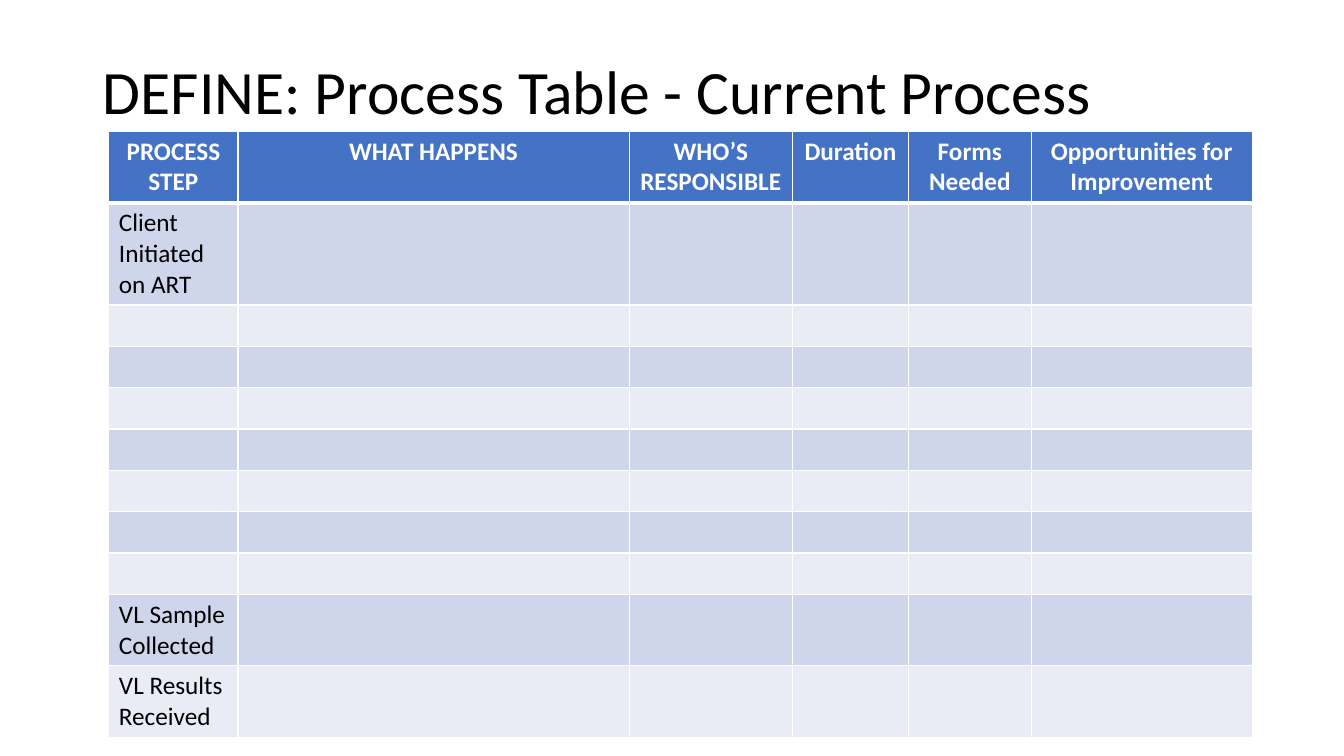
from dataclasses import dataclass

from pptx import Presentation
from pptx import util as u
from pptx.dml import color
from pptx.enum import text
from pptx.oxml import parse_xml
from pptx.oxml.ns import nsdecls

GRID_STEP = u.Inches(0.01)  # one grid column or row


@dataclass(frozen=True)
class Theme:
    font: str = "Calibri"
    title_size: int = 44
    table_size: int = 18
    ink: str = "000000"
    paper: str = "FFFFFF"
    header_fill: str = "4472C4"
    bands: tuple[str, str] = ("CFD5EA", "E9EBF5")
    thin_border: int = 1
    header_border: int = 3


@dataclass(frozen=True)
class Box:
    left: int
    top: int
    width: int
    height: int

    def lengths(self) -> tuple[int, int, int, int]:
        return tuple(n * GRID_STEP for n in (self.left, self.top, self.width, self.height))


@dataclass(frozen=True)
class Column:
    heading: str
    width: int


THEME = Theme()
SLIDE = Box(0, 0, 1333, 750)
TITLE = Box(92, 21, 1150, 145)
COLUMNS = (
    Column("PROCESS STEP", 128),
    Column("WHAT HAPPENS", 388),
    Column("WHO’S RESPONSIBLE", 162),
    Column("Duration", 115),
    Column("Forms Needed", 122),
    Column("Opportunities for Improvement", 219),
)
BLANK_STEPS = 7
STEPS = ("Client Initiated on ART", *[""] * BLANK_STEPS,
         "VL Sample Collected", "VL Results Received")
ROW_HEIGHT = 41
TABLE = Box(108, 130, sum(column.width for column in COLUMNS),
            ROW_HEIGHT * (len(STEPS) + 1))


def add_run(paragraph, wording: str, size: int, ink: str, bold: bool = False) -> None:
    run = paragraph.add_run()
    run.text = wording
    run.font.name = THEME.font
    run.font.size = u.Pt(size)
    run.font.bold = bold
    run.font.color.rgb = color.RGBColor.from_string(ink)


def add_borders(cell, top: int, bottom: int) -> None:
    widths = {"L": THEME.thin_border, "R": THEME.thin_border, "T": top, "B": bottom}
    properties = cell._tc.get_or_add_tcPr()
    for side, width in widths.items():
        properties.append(parse_xml(
            f'<a:ln{side} {nsdecls("a")} w="{u.Pt(width)}"><a:solidFill>'
            f'<a:srgbClr val="{THEME.paper}"/></a:solidFill></a:ln{side}>'))


def fill_cell(cell, wording: str, row: int) -> None:
    """Format one cell; row 0 is the header and the others alternate bands."""
    is_header = row == 0
    add_borders(cell,
                top=THEME.header_border if row == 1 else THEME.thin_border,
                bottom=THEME.header_border if is_header else THEME.thin_border)
    cell.fill.solid()
    cell.fill.fore_color.rgb = color.RGBColor.from_string(
        THEME.header_fill if is_header else THEME.bands[(row - 1) % 2])
    paragraph = cell.text_frame.paragraphs[0]
    paragraph.font.size = u.Pt(THEME.table_size)
    paragraph.alignment = text.PP_ALIGN.CENTER if is_header else text.PP_ALIGN.LEFT
    if wording:
        add_run(paragraph, wording, THEME.table_size,
                THEME.paper if is_header else THEME.ink, is_header)


def set_title(slide, wording: str) -> None:
    title = slide.shapes.title
    title.left, title.top, title.width, title.height = TITLE.lengths()
    frame = title.text_frame
    frame.word_wrap = True
    frame.auto_size = text.MSO_AUTO_SIZE.NONE
    frame.vertical_anchor = text.MSO_ANCHOR.MIDDLE
    paragraph = frame.paragraphs[0]
    paragraph.alignment = text.PP_ALIGN.LEFT
    paragraph.line_spacing = 0.9
    add_run(paragraph, wording, THEME.title_size, THEME.ink)


def add_process_table(slide) -> None:
    table = slide.shapes.add_table(len(STEPS) + 1, len(COLUMNS), *TABLE.lengths()).table
    for row in table.rows:
        row.height = ROW_HEIGHT * GRID_STEP
    for index, column in enumerate(COLUMNS):
        table.columns[index].width = column.width * GRID_STEP
        steps = STEPS if index == 0 else [""] * len(STEPS)
        for row, wording in enumerate((column.heading, *steps)):
            fill_cell(table.cell(row, index), wording, row)


def main() -> None:
    presentation = Presentation()
    _, _, presentation.slide_width, presentation.slide_height = SLIDE.lengths()
    slide = presentation.slides.add_slide(presentation.slide_layouts.get_by_name("Title Only"))
    set_title(slide, "DEFINE: Process Table - Current Process")
    add_process_table(slide)
    presentation.save("out.pptx")


if __name__ == "__main__":
    main()
